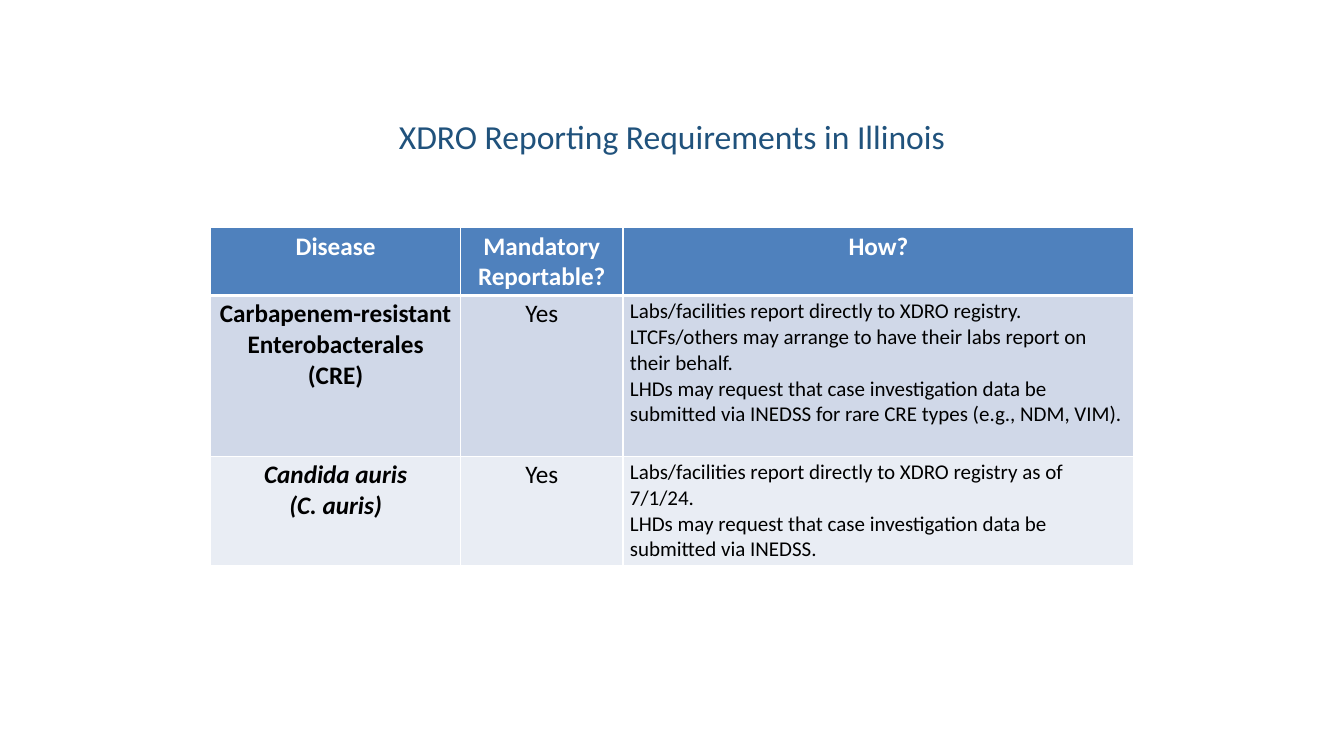
from lxml.etree import SubElement
from pptx import Presentation
from pptx.dml.color import RGBColor
from pptx.enum.text import MSO_ANCHOR, PP_ALIGN
from pptx.oxml.ns import qn
from pptx.util import Pt

WHITE, BLACK = "FFFFFF", "000000"
NAVY, HEADER, BAND_DARK, BAND_LIGHT = "20527C", "4F81BD", "D0D8E8", "E9EDF4"

HEADINGS = ["Disease", "Mandatory Reportable?", "How?"]
DISEASES = [
    ["Carbapenem-resistant Enterobacterales (CRE)", "Yes",
     "Labs/facilities report directly to XDRO registry.\n"
     "LTCFs/others may arrange to have their labs report on their behalf.\n"
     "LHDs may request that case investigation data be submitted via INEDSS "
     "for rare CRE types (e.g., NDM, VIM)."],
    ["Candida auris\n(C. auris)", "Yes",
     "Labs/facilities report directly to XDRO registry as of 7/1/24.\n"
     "LHDs may request that case investigation data be submitted via INEDSS."],
]


def color(value):
    return RGBColor.from_string(value)


def write(tf, text, size=18, fill=BLACK, bold=False, italic=False, align=PP_ALIGN.CENTER):
    """Write each line of text as one paragraph."""
    for i, line in enumerate(text.split("\n")):
        p = tf.paragraphs[0] if i == 0 else tf.add_paragraph()
        p.alignment = align
        r = p.add_run()
        r.text = line
        r.font.name = "Calibri"
        r.font.size = Pt(size)
        r.font.bold = bold
        r.font.italic = italic
        r.font.color.rgb = color(fill)


class Deck:
    def __init__(self, width, height):
        self.prs = Presentation()
        self.prs.slide_width, self.prs.slide_height = Pt(width), Pt(height)
        self.s = self.prs.slides.add_slide(self.prs.slide_layouts[6])

    def title(self, text, left, top, width, height):
        sp = self.s.shapes.add_textbox(Pt(left), Pt(top), Pt(width), Pt(height))
        tf = sp.text_frame
        tf.word_wrap = True
        tf.vertical_anchor = MSO_ANCHOR.MIDDLE
        write(tf, text, size=24, fill=NAVY)

    def table(self, left, top, widths, heights):
        sp = self.s.shapes.add_table(len(heights), len(widths), Pt(left), Pt(top),
                                     Pt(sum(widths)), Pt(sum(heights)))
        for column, width in zip(sp.table.columns, widths):
            column.width = Pt(width)
        for row, height in zip(sp.table.rows, heights):
            row.height = Pt(height)
        return sp.table

    def cell(self, cell, text, back, top_rule=1, bottom_rule=1, **style):
        cell.margin_left = cell.margin_right = Pt(5)
        cell.margin_top = cell.margin_bottom = Pt(2.5)
        # Borders come before the fill in the cell properties
        for side, width in zip("LRTB", (1, 1, top_rule, bottom_rule)):
            ln = SubElement(cell._tc.get_or_add_tcPr(), qn(f"a:ln{side}"), w=str(Pt(width)))
            SubElement(SubElement(ln, qn("a:solidFill")), qn("a:srgbClr"), val=WHITE)
        cell.fill.solid()
        cell.fill.fore_color.rgb = color(back)
        write(cell.text_frame, text, **style)


def main():
    deck = Deck(960, 540)
    deck.title("XDRO Reporting Requirements in Illinois", 156, 68, 648, 58)
    table = deck.table(150.5, 162.5, [178.5, 116, 365], [48.5, 115, 78])

    # Header row, closed by a heavier rule
    for c, heading in enumerate(HEADINGS):
        deck.cell(table.cell(0, c), heading, HEADER, bottom_rule=3, fill=WHITE, bold=True)

    # One banded row per disease; species names are italic
    for i, (row, back) in enumerate(zip(DISEASES, (BAND_DARK, BAND_LIGHT)), start=1):
        styles = [dict(bold=True, italic=row[0].startswith("Candida")),
                  dict(),
                  dict(size=15, align=PP_ALIGN.LEFT)]
        for c, (text, style) in enumerate(zip(row, styles)):
            deck.cell(table.cell(i, c), text, back, top_rule=3 if i == 1 else 1, **style)

    deck.prs.save("out.pptx")


if __name__ == "__main__":
    main()
